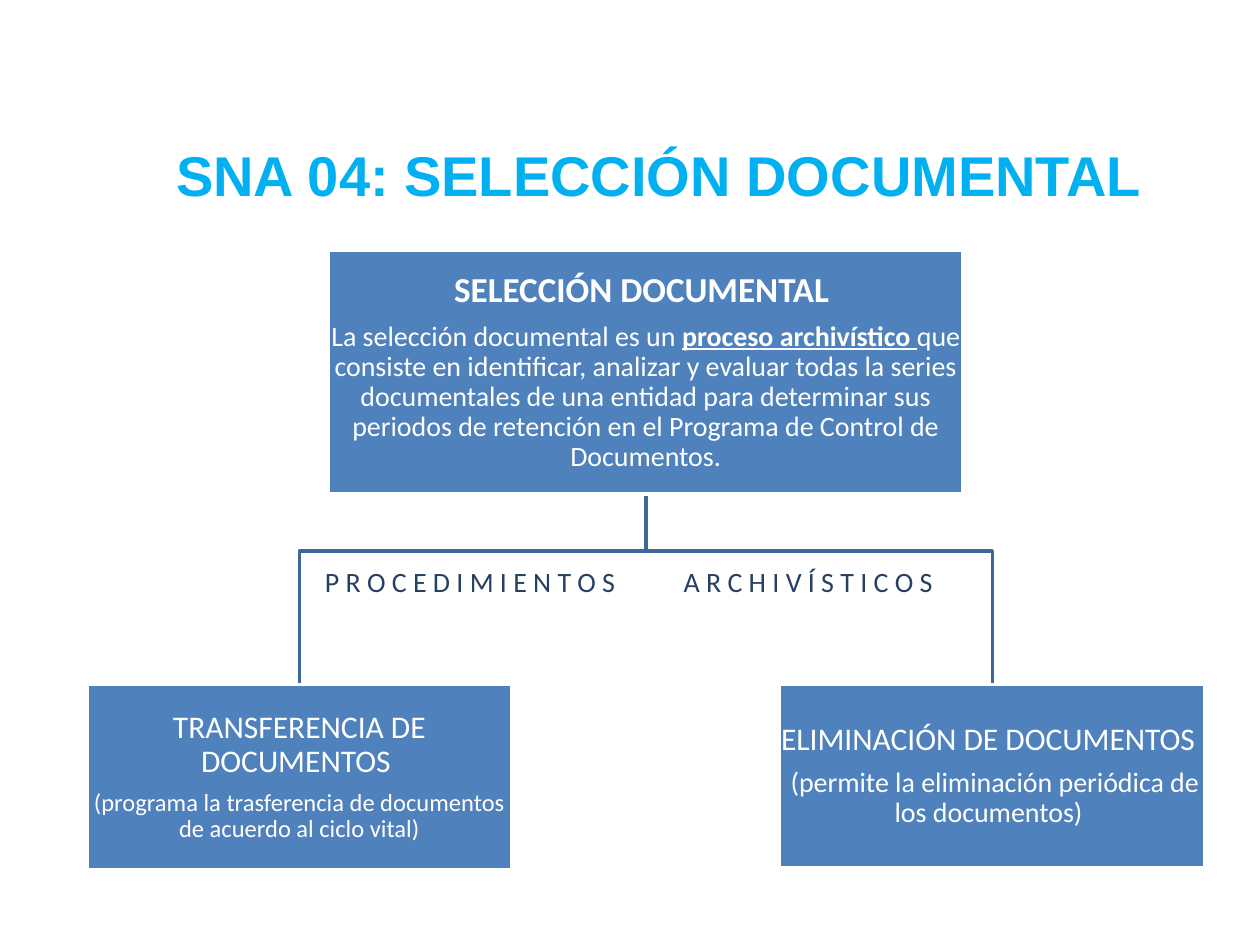
from lxml import etree
from pptx import Presentation
from pptx.dml.color import RGBColor
from pptx.enum import shapes, text
from pptx.oxml import ns
from pptx.util import Pt

BLUE, EDGE, WHITE = "4F81BD", "3F6797", "FFFFFF"
MID = text.PP_ALIGN.CENTER


def rgb(code):
    return RGBColor.from_string(code)


def write(frame, paras, font="Calibri", color=WHITE, align=None, pad=None,
          lead=None, gap=0, tab=None):
    """Fill a frame; each paragraph is a list of (text, size, bold, underline).

    gap is the space after, as a share of the paragraph's first text size.
    """
    frame.word_wrap = True
    frame.vertical_anchor = text.MSO_ANCHOR.MIDDLE
    if pad is not None:
        frame.margin_left = frame.margin_right = Pt(pad)
        frame.margin_top = frame.margin_bottom = Pt(pad)
    for i, runs in enumerate(paras):
        para = frame.add_paragraph() if i else frame.paragraphs[0]
        para.alignment = align
        para.line_spacing = lead
        para.space_after = Pt(runs[0][1] * gap)
        if tab:
            stops = etree.SubElement(para._p.get_or_add_pPr(), ns.qn("a:tabLst"))
            etree.SubElement(stops, ns.qn("a:tab"), pos=str(Pt(tab)), algn="l")
        for words, size, bold, under in runs:
            run = para.add_run()
            run.text = words
            run.font.name = font
            run.font.size = Pt(size)
            run.font.bold = bold
            run.font.underline = under
            run.font.color.rgb = rgb(color)


deck = Presentation()
deck.slide_width, deck.slide_height = Pt(720), Pt(540)
slide = deck.slides.add_slide(deck.slide_layouts[6])
items = slide.shapes

title = items.add_textbox(Pt(93.6), Pt(77), Pt(584), Pt(45.4))
write(title.text_frame, [[("SNA 04: SELECCIÓN DOCUMENTAL", 32, True, False)]],
      font="Arial", color="00B0F0")

# Branches from the process down to its two procedures
stem, top, bend, low = 369, 282.4, 315, 391.2
for end in (567, 171):
    path = items.build_freeform(Pt(stem), Pt(top))
    path.add_line_segments([(Pt(stem), Pt(bend)), (Pt(end), Pt(bend)),
                            (Pt(end), Pt(low))], close=False)
    branch = path.convert_to_shape()
    branch.shadow.inherit = False
    branch.fill.background()
    branch.line.color.rgb = rgb(EDGE)
    branch.line.width = Pt(2)

process = [
    [("SELECCIÓN DOCUMENTAL ", 20, True, False)],
    [("La selección documental es un ", 16, False, False),
     ("proceso archivístico ", 16, True, True),
     ("que consiste en identificar, analizar y evaluar todas la series "
      "documentales de una entidad para determinar sus periodos de retención "
      "en el Programa de Control de Documentos.", 16, False, False)],
]
transfer = [
    [("TRANSFERENCIA DE DOCUMENTOS ", 18, False, False)],
    [("(programa la trasferencia de documentos de acuerdo al ciclo vital)",
      14, False, False)],
]
removal = [
    [("ELIMINACIÓN DE DOCUMENTOS ", 18, False, False)],
    [(" (permite la eliminación periódica de los documentos) ",
      16, False, False)],
]

for left, y, wide, high, paras in (
    (187.7, 143.2, 362.6, 139.2, process),
    (49.6, low, 243, 105.8, transfer),
    (445.2, low, 243, 104.4, removal),
):
    box = items.add_shape(shapes.MSO_SHAPE.RECTANGLE,
                          Pt(left), Pt(y), Pt(wide), Pt(high))
    box.shadow.inherit = False
    box.fill.solid()
    box.fill.fore_color.rgb = rgb(BLUE)
    box.line.color.rgb = rgb(WHITE)
    box.line.width = Pt(2)
    write(box.text_frame, paras, align=MID, pad=0.8, lead=0.9, gap=0.35)

label = items.add_textbox(Pt(178.6), Pt(309.6), Pt(368.6), Pt(45.4))
write(label.text_frame,
      [[("P R O C E D I M I E N T O S\tA R C H I V Í S T I C O S",
         16, False, False)]],
      color="254061", tab=205)

deck.save("out.pptx")
